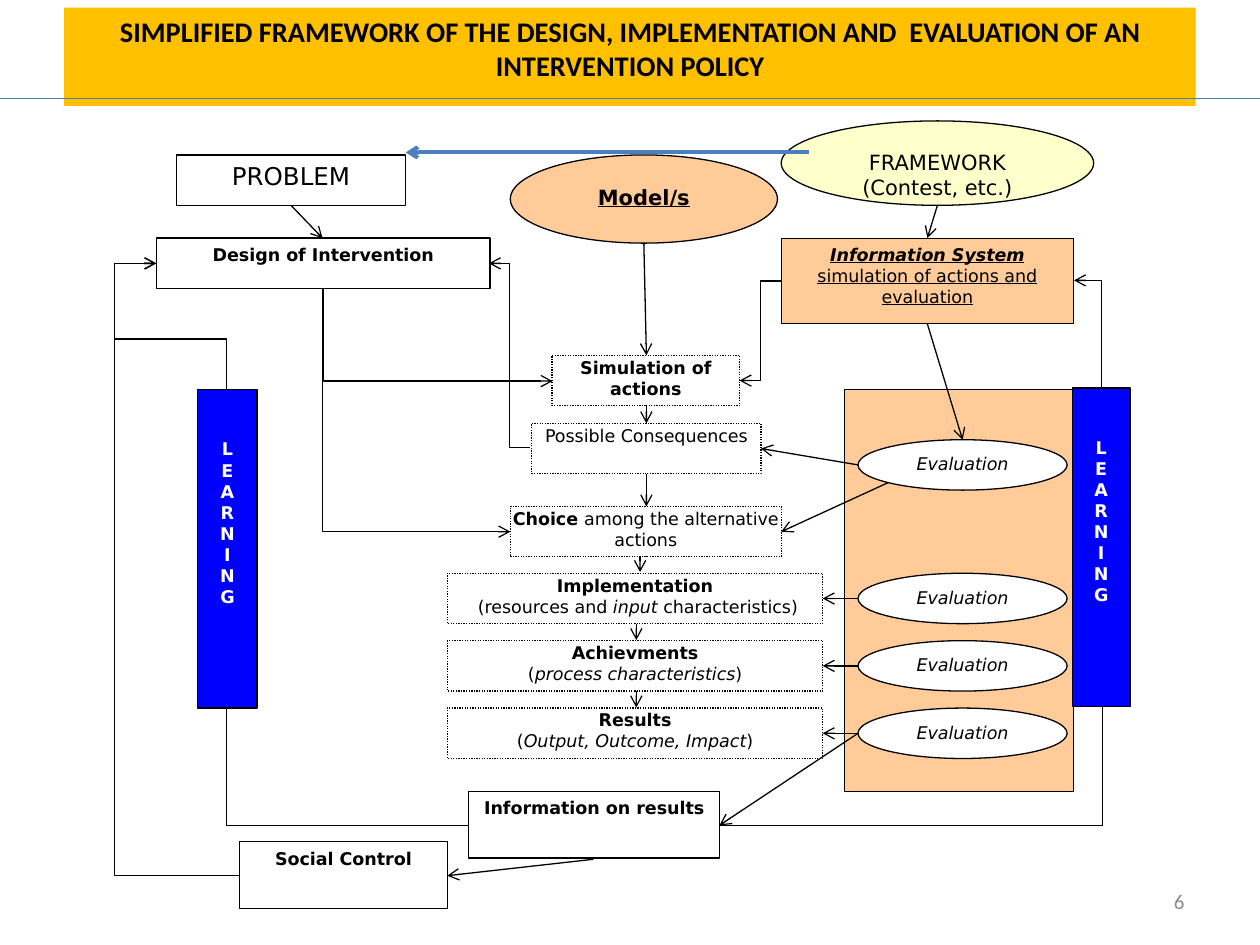
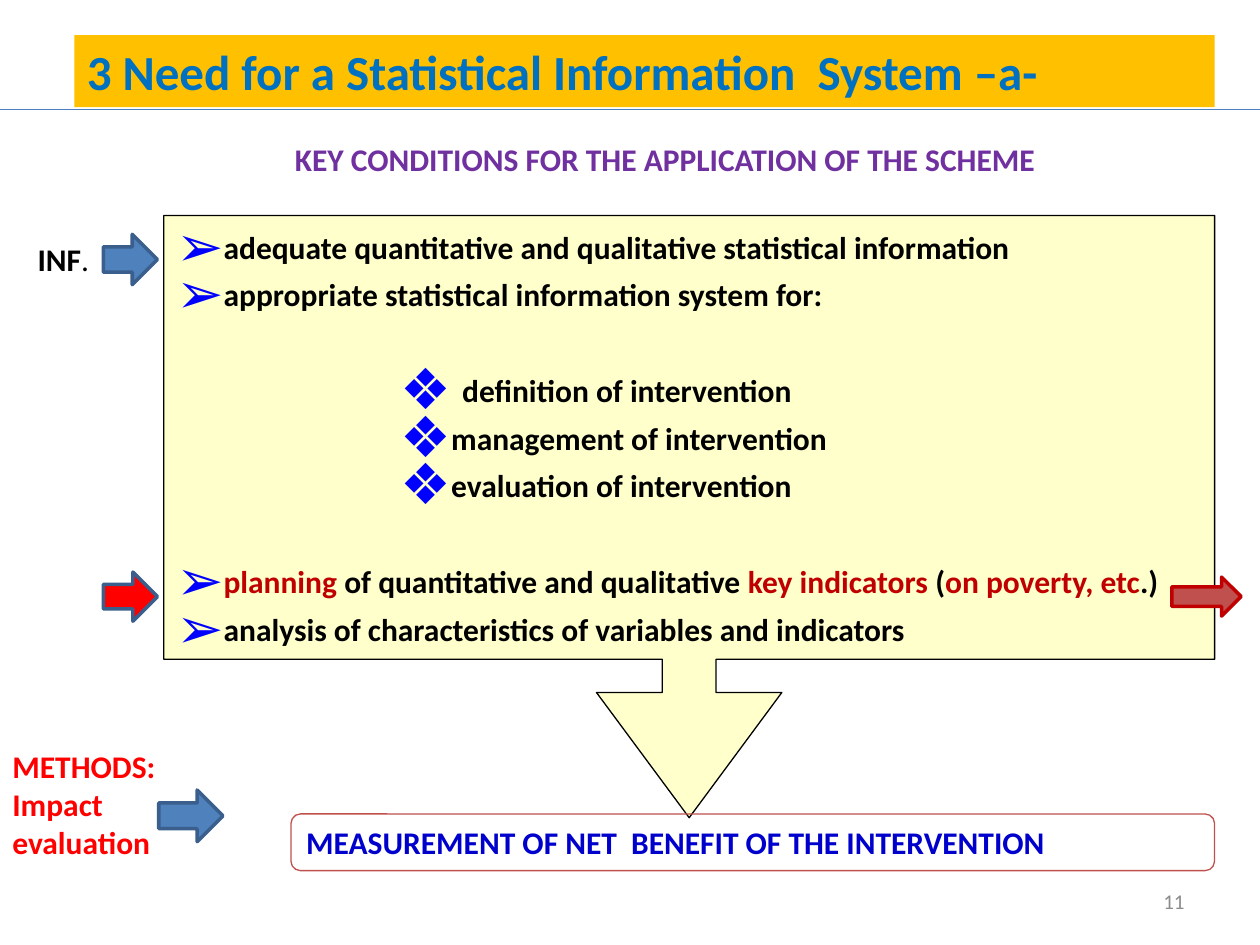
from dataclasses import dataclass

from lxml import etree
from pptx import Presentation
from pptx.dml.color import RGBColor
from pptx.enum.dml import MSO_LINE
from pptx.enum.shapes import MSO_CONNECTOR, MSO_SHAPE
from pptx.enum.text import MSO_ANCHOR, MSO_AUTO_SIZE, PP_ALIGN
from pptx.oxml.ns import qn
from pptx.util import Inches, Pt

# Enum members
RECTANGLE, OVAL = MSO_SHAPE.RECTANGLE, MSO_SHAPE.OVAL
ROUNDED, RIGHT_ARROW = MSO_SHAPE.ROUNDED_RECTANGLE, MSO_SHAPE.RIGHT_ARROW
CALLOUT = MSO_SHAPE.DOWN_ARROW_CALLOUT
STRAIGHT, ELBOW = MSO_CONNECTOR.STRAIGHT, MSO_CONNECTOR.ELBOW
LEFT, CENTER, RIGHT = PP_ALIGN.LEFT, PP_ALIGN.CENTER, PP_ALIGN.RIGHT
TOP, MIDDLE = MSO_ANCHOR.TOP, MSO_ANCHOR.MIDDLE
DOTTED = MSO_LINE.ROUND_DOT

# Colours and fonts
BLACK = RGBColor(0x00, 0x00, 0x00)
WHITE = RGBColor(0xFF, 0xFF, 0xFF)
GREY = RGBColor(0x8C, 0x8C, 0x8C)
GOLD = RGBColor(0xFF, 0xC0, 0x00)
PEACH = RGBColor(0xFF, 0xCC, 0x99)
CREAM = RGBColor(0xFF, 0xFF, 0xCC)
BLUE = RGBColor(0x00, 0x00, 0xFF)
RULE_BLUE = RGBColor(0x4B, 0x7E, 0xBC)
HEADING_BLUE = RGBColor(0x00, 0x70, 0xC0)
RESULT_BLUE = RGBColor(0x00, 0x00, 0xCC)
ARROW_BLUE = RGBColor(0x4F, 0x81, 0xBD)
ARROW_EDGE = RGBColor(0x3A, 0x5F, 0x8C)
PURPLE = RGBColor(0x70, 0x30, 0xA0)
RED = RGBColor(0xFF, 0x00, 0x00)
DARK_RED = RGBColor(0xC0, 0x00, 0x00)
BRICK = RGBColor(0xC0, 0x50, 0x4D)
CALIBRI, DEJAVU = "Calibri", "DejaVu Sans"

DEFAULT_INSETS = (0.1, 0.05, 0.1, 0.05)
NARROW = (0.02, 0.05, 0.02, 0.05)
TIGHT = (0.02, 0.01, 0.02, 0.01)
TITLE_ONLY = 5


@dataclass(frozen=True)
class Run:
    text: str
    bold: bool = False
    italic: bool = False
    underline: bool = False
    color: RGBColor | None = None


@dataclass(frozen=True)
class TextStyle:
    size: float = 10
    font: str = DEJAVU
    color: RGBColor = BLACK
    align: PP_ALIGN = CENTER
    anchor: MSO_ANCHOR = TOP
    insets: tuple = DEFAULT_INSETS


@dataclass(frozen=True)
class Box:
    at: tuple
    paragraphs: tuple = ()
    style: TextStyle = TextStyle()
    kind: MSO_SHAPE = RECTANGLE
    fill: RGBColor | None = WHITE
    line: RGBColor | None = BLACK
    line_width: float = 0.75
    dotted: bool = False
    adjustments: tuple = ()


@dataclass(frozen=True)
class Elbow:
    at: tuple
    rotation: int
    flip: str
    preset: str
    adjustments: tuple = ()
    arrow: bool = True


@dataclass(frozen=True)
class Bullet:
    runs: tuple
    mark: str = "➢"
    start: float = 0
    hanging: float = 0.37
    space_before: float = 5.6


def bold(text: str, color: RGBColor | None = None) -> Run:
    return Run(text, bold=True, color=color)


def write_text(shape, paragraphs: tuple, style: TextStyle) -> None:
    frame = shape.text_frame
    frame.word_wrap = True
    frame.auto_size = MSO_AUTO_SIZE.NONE
    frame.vertical_anchor = style.anchor
    frame.margin_left, frame.margin_top, frame.margin_right, frame.margin_bottom = map(
        Inches, style.insets)
    for index, runs in enumerate(paragraphs):
        paragraph = frame.paragraphs[0] if index == 0 else frame.add_paragraph()
        paragraph.alignment = style.align
        for item in runs:
            run = paragraph.add_run()
            run.text = item.text
            run.font.name, run.font.size = style.font, Pt(style.size)
            run.font.bold, run.font.italic = item.bold, item.italic
            run.font.underline = item.underline
            run.font.color.rgb = item.color or style.color


def draw_box(slide, box: Box):
    shape = slide.shapes.add_shape(box.kind, *map(Inches, box.at))
    shape.shadow.inherit = False
    for index, value in enumerate(box.adjustments):
        shape.adjustments[index] = value
    if box.fill is None:
        shape.fill.background()
    else:
        shape.fill.solid()
        shape.fill.fore_color.rgb = box.fill
    if box.line is None:
        shape.line.fill.background()
    else:
        shape.line.color.rgb = box.line
        shape.line.width = Pt(box.line_width)
    if box.dotted:
        shape.line.dash_style = DOTTED
    write_text(shape, box.paragraphs, box.style)
    return shape


def draw_text(slide, at: tuple, paragraphs: tuple, style: TextStyle) -> None:
    write_text(slide.shapes.add_textbox(*map(Inches, at)), paragraphs, style)


def draw_line(slide, start: tuple, end: tuple, color: RGBColor = BLACK,
              width: float = 0.75, arrow: bool = True, kind: MSO_CONNECTOR = STRAIGHT):
    connector = slide.shapes.add_connector(kind, *map(Inches, start + end))
    connector.line.color.rgb = color
    connector.line.width = Pt(width)
    properties = connector._element.spPr
    if arrow:
        etree.SubElement(properties.find(qn("a:ln")), qn("a:tailEnd"), type="arrow")
    etree.SubElement(properties, qn("a:effectLst"))
    return connector


def draw_elbow(slide, elbow: Elbow) -> None:
    left, top, width, height = elbow.at
    connector = draw_line(slide, (left, top), (left + width, top + height),
                          arrow=elbow.arrow, kind=ELBOW)
    properties = connector._element.spPr
    transform = properties.find(qn("a:xfrm"))
    transform.set("rot", str(elbow.rotation * 60000))
    for axis in elbow.flip:
        transform.set(f"flip{axis.upper()}", "1")
    geometry = properties.find(qn("a:prstGeom"))
    geometry.set("prst", elbow.preset)
    guides = geometry.find(qn("a:avLst"))
    for number, value in enumerate(elbow.adjustments, 1):
        etree.SubElement(guides, qn("a:gd"), name=f"adj{number}",
                         fmla=f"val {round(value * 100000)}")


def format_bullet(paragraph, bullet: Bullet) -> None:
    paragraph.space_before = Pt(bullet.space_before)
    properties = paragraph._p.get_or_add_pPr()
    properties.set("marL", str(Inches(bullet.start + bullet.hanging)))
    properties.set("indent", str(-Inches(bullet.hanging)))
    color = etree.SubElement(properties, qn("a:buClr"))
    etree.SubElement(color, qn("a:srgbClr"), val=str(BLUE))
    etree.SubElement(properties, qn("a:buSzPct"), val="180000")
    etree.SubElement(properties, qn("a:buFont"), typeface=DEJAVU)
    etree.SubElement(properties, qn("a:buChar"), char=bullet.mark)


def start_slide(presentation, at: tuple, title: str, style: TextStyle,
                rule_top: float, number: str):
    """Add a slide with its title, page number and horizontal rule."""
    slide = presentation.slides.add_slide(presentation.slide_layouts[TITLE_ONLY])
    shape = slide.shapes.title
    shape.left, shape.top, shape.width, shape.height = map(Inches, at)
    write_text(shape, ((bold(title),),), style)
    draw_line(slide, (0, rule_top), (10, rule_top), RULE_BLUE, arrow=False)
    draw_text(slide, (7.17, 6.95, 2.33, 0.4), ((Run(number),),),
              TextStyle(12, CALIBRI, GREY, RIGHT, MIDDLE))
    return slide


def build_framework(presentation) -> None:
    slide = start_slide(
        presentation, (0.51, 0.06, 8.98, 0.78),
        "SIMPLIFIED FRAMEWORK OF THE DESIGN, IMPLEMENTATION AND  EVALUATION OF AN "
        "INTERVENTION POLICY", TextStyle(16.2, CALIBRI), 0.78, "6")
    slide.shapes.title.fill.solid()
    slide.shapes.title.fill.fore_color.rgb = GOLD

    narrow, tight = TextStyle(insets=NARROW), TextStyle(insets=TIGHT)
    learning = tuple((bold(letter),) for letter in "LEARNING")
    learning_style = TextStyle(color=WHITE, insets=(0.1, 0.39, 0.1, 0.05))

    # Context, design and decision boxes
    boxes = [
        Box((6.7, 3.09, 1.82, 3.19), fill=PEACH),
        Box((1.4, 1.23, 1.82, 0.4), ((Run("PROBLEM"),),), TextStyle(14)),
        Box((4.05, 1.23, 2.12, 0.7), ((Run("Model/s", bold=True, underline=True),),),
            TextStyle(12, insets=(0.1, 0.13, 0.1, 0.05)), OVAL, PEACH),
        Box((6.2, 0.96, 2.48, 0.67), ((Run("FRAMEWORK"),), (Run("(Contest, etc.)"),)),
            TextStyle(12, insets=(0.1, 0.13, 0.1, 0.09)), OVAL, CREAM),
        Box((1.24, 1.89, 2.65, 0.4), ((bold("Design of Intervention"),),), narrow),
        Box((6.2, 1.89, 2.32, 0.68),
            ((Run("Information System", True, True, True),
              Run(" simulation of actions and evaluation", underline=True)),),
            TextStyle(insets=(0.06, 0.05, 0.06, 0.05)), fill=PEACH),
        Box((4.38, 2.82, 1.49, 0.4), ((bold("Simulation of actions"),),), tight, dotted=True),
        Box((4.22, 3.36, 1.82, 0.4), ((Run("Possible Consequences"),),),
            TextStyle(insets=(0.06, 0.01, 0.06, 0.01)), dotted=True),
        Box((4.05, 4.02, 2.15, 0.4),
            ((bold("Choice "), Run("among the alternative actions")),), tight, dotted=True),
        Box((3.72, 6.28, 1.99, 0.53), ((bold("Information on results"),),)),
        Box((1.9, 6.68, 1.65, 0.53), ((bold("Social Control"),),)),
        Box((1.57, 3.09, 0.47, 2.53), learning, learning_style, fill=BLUE),
        Box((8.51, 3.08, 0.46, 2.53), learning, learning_style, fill=BLUE),
    ]

    # Stages, each evaluated on the right
    stages = (
        ("Implementation", " (resources and ", "input", " characteristics)"),
        ("Achievments", "(", "process characteristics", ")"),
        ("Results", "(", "Output, Outcome, Impact", ")"),
    )
    stage_tops = [4.55 + 0.535 * index for index in range(len(stages))]
    for top, (name, before, term, after) in zip(stage_tops, stages):
        detail = (Run(before), Run(term, italic=True), Run(after))
        boxes.append(Box((3.55, top, 2.98, 0.4), ((bold(name),), detail), tight, dotted=True))
    for top in [3.49, *stage_tops]:
        boxes.append(Box((6.81, top, 1.66, 0.4), ((Run("Evaluation", italic=True),),),
                         narrow, OVAL))
    for box in boxes:
        draw_box(slide, box)

    # Straight arrows
    arrows = [
        ((2.31, 1.63), (2.56, 1.89)), ((7.44, 1.63), (7.36, 1.89)),
        ((7.36, 2.57), (7.64, 3.49)), ((5.11, 1.93), (5.13, 2.82)),
        ((6.81, 3.69), (6.04, 3.56)), ((7.05, 3.83), (6.2, 4.22)),
        ((6.81, 5.82), (5.71, 6.55)), ((4.71, 6.82), (3.55, 6.95)),
        ((5.13, 3.22), (5.13, 3.36)), ((5.13, 3.76), (5.13, 4.02)),
        ((5.08, 4.41), (5.08, 4.54)),
    ]
    arrows += [((6.81, top + 0.2), (6.53, top + 0.2)) for top in stage_tops]
    arrows += [((5.05, top + 0.4), (5.05, top + 0.53)) for top in stage_tops[:-1]]
    for start, end in arrows:
        draw_line(slide, start, end)
    draw_line(slide, (6.42, 1.21), (3.22, 1.21), RULE_BLUE, 2.25)

    # Bent feedback lines
    two, three, four = (f"bentConnector{count}" for count in (2, 3, 4))
    for elbow in (
        Elbow((3.11, 1.75, 0.73, 1.82), 270, "h", two),
        Elbow((5.87, 2.23, 0.33, 0.79), 180, "v", three, (0.5,)),
        Elbow((3.88, 2.09, 0.33, 1.46), 180, "", three, (0.5,)),
        Elbow((2.34, 2.51, 1.93, 1.49), 270, "h", two),
        Elbow((1.24, 2.09, 0.66, 4.86), 180, "", three, (1.5,)),
        Elbow((5.71, 5.61, 3.04, 0.94), 0, "v", two, arrow=False),
        Elbow((1.8, 5.62, 1.92, 0.93), 180, "", two, arrow=False),
        Elbow((1.02, 2.31, 1, 0.56), 90, "h", four, (0.4, 1.59)),
        Elbow((8.21, 2.54, 0.85, 0.22), 90, "h", two),
    ):
        draw_elbow(slide, elbow)


def build_information_system(presentation) -> None:
    slide = start_slide(
        presentation, (0.93, 1.06, 8.7, 0.54),
        "KEY CONDITIONS FOR THE APPLICATION OF THE SCHEME",
        TextStyle(18, CALIBRI, PURPLE), 0.87, "11")
    body = TextStyle(18, CALIBRI, align=LEFT)

    # Heading band
    draw_box(slide, Box((0.59, 0.28, 9.05, 0.57),
                        ((bold("3 Need for a Statistical Information  System –a-"),),),
                        TextStyle(28, CALIBRI, HEADING_BLUE, LEFT), fill=GOLD, line=None))

    # Conditions callout
    planning = (bold("planning", DARK_RED), bold(" of quantitative and qualitative "),
                bold("key indicators ", DARK_RED), bold("("),
                bold("on poverty, etc", DARK_RED), bold(".)"))
    bullets = (
        Bullet((bold("adequate quantitative and qualitative statistical information"),),
               space_before=0),
        Bullet((bold("appropriate statistical information system for:"),)),
        Bullet((bold("definition of intervention"),), "❖", 1.78, 0.49, 33.2),
        Bullet((bold("management of intervention"),), "❖", 1.78),
        Bullet((bold("evaluation of intervention"),), "❖", 1.78),
        Bullet(planning, space_before=33.2),
        Bullet((bold("analysis of characteristics of variables and indicators"),)),
    )
    callout = draw_box(slide, Box(
        (1.3, 1.71, 8.34, 4.78), tuple(bullet.runs for bullet in bullets), body,
        CALLOUT, CREAM, adjustments=(0.089, 0.154, 0.208, 0.737)))
    paragraphs = callout.text_frame.paragraphs
    paragraphs[0].line_spacing = Pt(25)
    for paragraph, bullet in zip(paragraphs, bullets):
        format_bullet(paragraph, bullet)

    # Result
    draw_box(slide, Box((2.31, 6.46, 7.33, 0.45),
                        ((bold("MEASUREMENT OF NET  BENEFIT OF THE INTERVENTION"),),),
                        TextStyle(18, CALIBRI, RESULT_BLUE, LEFT), ROUNDED, None, BRICK))

    # Side labels and block arrows
    draw_text(slide, (0.2, 1.86, 0.87, 0.4), ((bold("INF"), Run(".")),), body)
    draw_text(slide, (0, 5.88, 1.93, 1.01), ((bold("METHODS:"),), (bold("Impact evaluation"),)),
              TextStyle(18, CALIBRI, RED, LEFT))
    for at, fill, edge in (
        ((0.82, 1.86, 0.43, 0.4), ARROW_BLUE, ARROW_EDGE),
        ((1.26, 6.27, 0.51, 0.41), ARROW_BLUE, ARROW_EDGE),
        ((0.82, 4.54, 0.43, 0.39), RED, ARROW_EDGE),
        ((9.3, 4.58, 0.55, 0.31), BRICK, DARK_RED),
    ):
        draw_box(slide, Box(at, kind=RIGHT_ARROW, fill=fill, line=edge, line_width=2))


def main() -> None:
    presentation = Presentation()
    presentation.slide_width, presentation.slide_height = Inches(10), Inches(7.5)
    build_framework(presentation)
    build_information_system(presentation)
    presentation.save("out.pptx")


if __name__ == "__main__":
    main()
